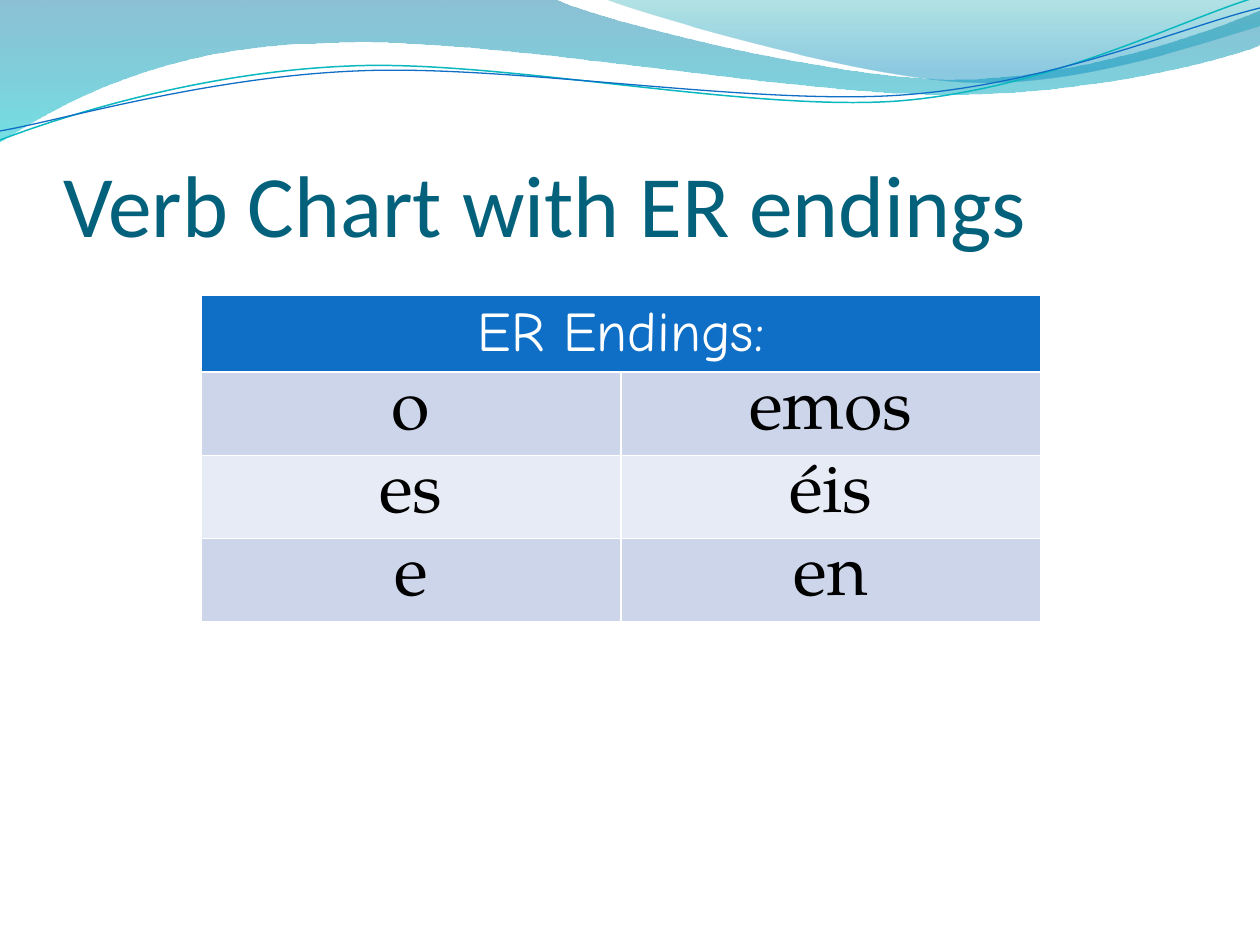
from dataclasses import dataclass

from lxml.etree import SubElement
from pptx import Presentation
from pptx.dml.color import RGBColor as RGB
from pptx.enum.text import MSO_ANCHOR as Anchor, MSO_AUTO_SIZE as AutoSize, PP_ALIGN as Align
from pptx.oxml.ns import qn
from pptx.util import Emu, Pt

PX = 914400 // 126
Point = tuple[int, int]


@dataclass(frozen=True)
class Theme:
    title: str = "04617B"
    header: str = "0F6FC6"
    header_text: str = "FFFFFF"
    body_text: str = "000000"
    bands: tuple[str, str] = ("CCD5EA", "E7EBF5")
    title_font: str = "Calibri"
    header_font: str = "Comic Neue"
    body_font: str = "TeX Gyre Pagella"
    title_size: int = 50
    header_size: int = 32
    body_size: int = 40


@dataclass(frozen=True)
class Stop:
    position: float
    color: str
    opacity: int


@dataclass(frozen=True)
class Curve:
    """Segments hold one point for a straight line and three for a Bézier curve."""
    start: Point
    segments: tuple[tuple[Point, ...], ...]


@dataclass(frozen=True)
class Wave:
    curve: Curve
    stops: tuple[Stop, Stop]


@dataclass(frozen=True)
class Strand:
    curve: Curve
    color: str
    width: float


THEME = Theme()

WAVES = (
    Wave(Curve((0, 0), (
        ((554, -1),),
        ((600, 21), (837, 79), (955, 79)),
        ((1075, 79), (1207, 33), (1260, 11)),
        ((1261, 45),),
        ((1239, 55), (1096, 96), (940, 94)),
        ((784, 94), (481, 35), (324, 43)),
        ((163, 45), (58, 105), (-1, 142)),
    )), (Stop(0, "0074A1", 45), Stop(1, "00C6CF", 55))),
    Wave(Curve((604, -1), (
        ((641, 14), (859, 78), (969, 82)),
        ((1079, 87), (1211, 40), (1260, 26)),
        ((1260, 0),),
    )), (Stop(0, "00A1A9", 30), Stop(0.8, "008BBF", 45))),
)

STRANDS = (
    Strand(Curve((0, 140), (
        ((60, 117), (199, 72), (349, 66)),
        ((498, 59), (747, 112), (898, 101)),
        ((1050, 89), (1182, 19), (1257, -3)),
    )), "0AB8BF", 0.85),
    Strand(Curve((0, 131), (
        ((59, 121), (207, 77), (357, 71)),
        ((508, 64), (752, 106), (903, 95)),
        ((1053, 84), (1185, 26), (1260, 8)),
    )), "0F6FC6", 0.75),
)

ENDINGS = (("o", "emos"), ("es", "éis"), ("e", "en"))


def px(n: int) -> Emu:
    return Emu(n * PX)


def add_curve(s, curve: Curve, close: bool):
    """Build a freeform through all points, then turn each triple into a Bézier curve."""
    builder = s.shapes.build_freeform(*curve.start, scale=PX)
    points = [point for segment in curve.segments for point in segment]
    builder.add_line_segments(points, close=close)
    sp = builder.convert_to_shape()
    sp.shadow.inherit = False
    lines = iter(list(sp.element.iter(qn("a:lnTo"))))
    for segment in curve.segments:
        group = [next(lines) for _ in segment]
        if len(group) == 3:
            group[0].tag = qn("a:cubicBezTo")
            for line in group[1:]:
                group[0].append(line[0])
                line.getparent().remove(line)
    return sp


def add_wave(s, wave: Wave) -> None:
    sp = add_curve(s, wave.curve, close=True)
    sp.line.fill.background()
    sp.fill.gradient()
    sp.fill.gradient_angle = 270
    for target, stop in zip(sp.fill.gradient_stops, wave.stops):
        target.position = stop.position
        target.color.rgb = RGB.from_string(stop.color)
    for color, stop in zip(sp.element.iter(qn("a:srgbClr")), wave.stops):
        SubElement(color, qn("a:alpha"), val=str(stop.opacity * 1000))


def add_strand(s, strand: Strand) -> None:
    sp = add_curve(s, strand.curve, close=False)
    sp.fill.background()
    sp.line.color.rgb = RGB.from_string(strand.color)
    sp.line.width = Pt(strand.width)


def write(tf, text: str, font: str, size: int, color: str, align: Align) -> None:
    tf.text = text
    p = tf.paragraphs[0]
    p.alignment = align
    r = p.runs[0]
    r.font.name = font
    r.font.size = Pt(size)
    r.font.bold = False
    r.font.color.rgb = RGB.from_string(color)


def set_title(s, text: str) -> None:
    title = s.shapes.title
    title.left, title.top, title.width, title.height = map(px, (63, 97, 1134, 158))
    tf = title.text_frame
    tf.auto_size = AutoSize.NONE
    tf.word_wrap = True
    tf.vertical_anchor = Anchor.BOTTOM
    tf.margin_left = tf.margin_right = tf.margin_bottom = 0
    write(tf, text, THEME.title_font, THEME.title_size, THEME.title, Align.LEFT)
    title.element.getparent().append(title.element)  # bring in front of the waves


def fill_cell(cell, color: str) -> None:
    cell.fill.solid()
    cell.fill.fore_color.rgb = RGB.from_string(color)


def add_endings_table(s, heading: str, endings: tuple[tuple[str, str], ...]) -> None:
    header_h, row_h, col_w = 76, 83, 420
    rows = len(endings) + 1
    table = s.shapes.add_table(rows, 2, px(201), px(295), px(2 * col_w),
                               px(header_h + row_h * len(endings))).table
    for i, row in enumerate(table.rows):
        row.height = px(row_h if i else header_h)

    header = table.cell(0, 0)
    header.merge(table.cell(0, 1))
    fill_cell(header, THEME.header)
    write(header.text_frame, heading, THEME.header_font, THEME.header_size,
          THEME.header_text, Align.CENTER)
    for i, pair in enumerate(endings):
        for j, ending in enumerate(pair):
            cell = table.cell(i + 1, j)
            fill_cell(cell, THEME.bands[i % 2])
            write(cell.text_frame, ending, THEME.body_font, THEME.body_size,
                  THEME.body_text, Align.CENTER)


def main() -> None:
    prs = Presentation()
    prs.slide_width, prs.slide_height = px(1260), px(945)
    s = prs.slides.add_slide(prs.slide_layouts[5])
    for wave in WAVES:
        add_wave(s, wave)
    for strand in STRANDS:
        add_strand(s, strand)
    set_title(s, "Verb Chart with ER endings")
    add_endings_table(s, "ER Endings:", ENDINGS)
    prs.save("out.pptx")


if __name__ == "__main__":
    main()
